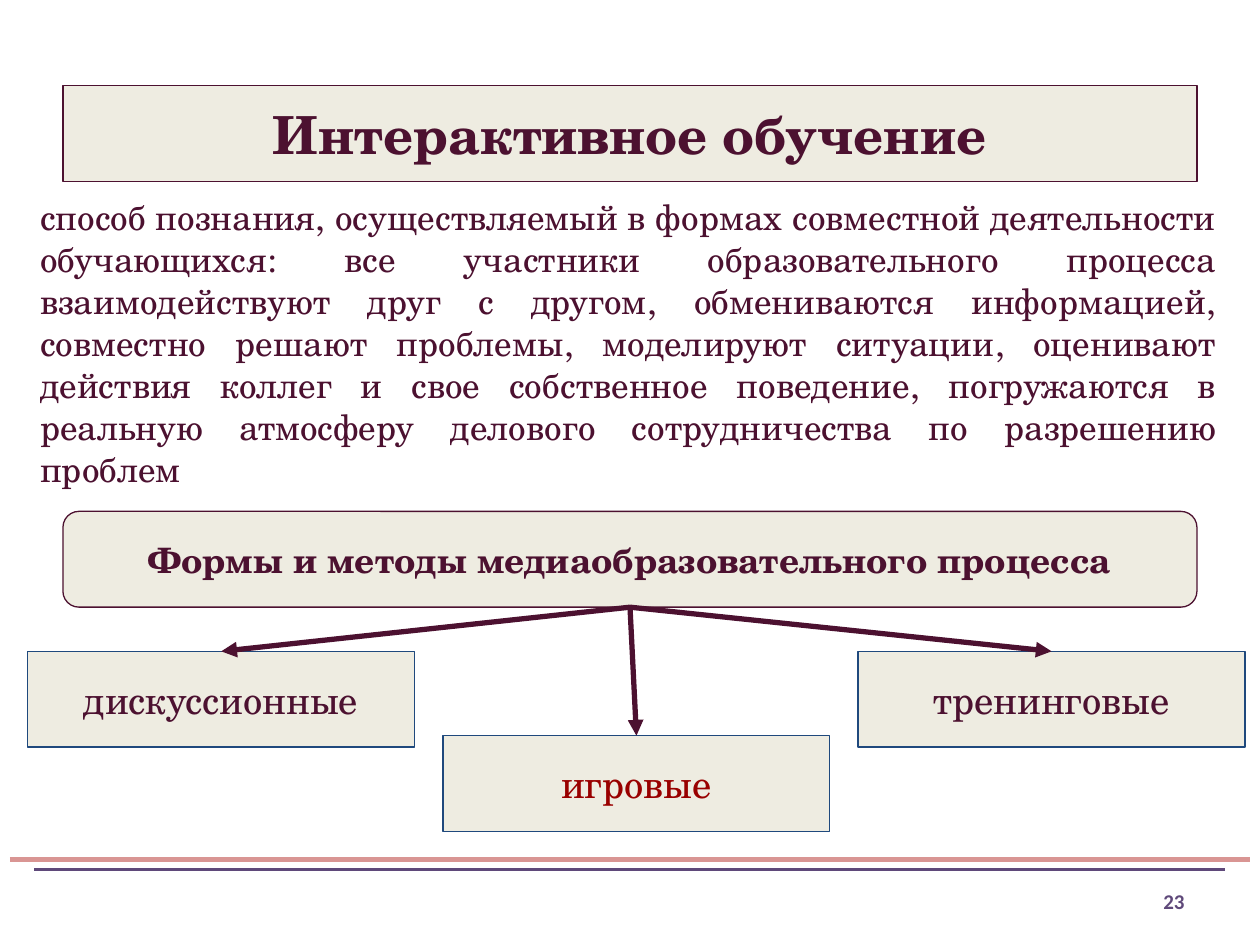
from lxml import etree
from pptx import Presentation
from pptx import util as u
from pptx.dml import color
from pptx.enum import shapes, text
from pptx.oxml import ns

SERIF = "TeX Gyre Schola"
PLUM, CREAM, NAVY, RED = "4C1130", "EEECE1", "1F497D", "990000"
ROSE, VIOLET = "D99593", "5F497A"
TOP, BOTTOM = 0, 2  # connection sites of a rectangle
MARGIN, WIDE, BOX_HEIGHT = 1.27, 22.86, 1.93


def rgb(value):
    return color.RGBColor.from_string(value)


def write(shape, words, size, ink, alignment, bold=False, font=SERIF, inset=0.25):
    """Fill the shape with one wrapped paragraph; inset is the top and bottom margin in cm."""
    frame = shape.text_frame
    frame.word_wrap = True
    frame.vertical_anchor = text.MSO_ANCHOR.MIDDLE
    frame.margin_left = frame.margin_right = u.Cm(0.25)
    frame.margin_top = frame.margin_bottom = u.Cm(inset)
    paragraph = frame.paragraphs[0]
    paragraph.text = words
    paragraph.alignment = alignment
    paragraph.font.name = font
    paragraph.font.size = u.Pt(size)
    paragraph.font.bold = bold
    paragraph.font.color.rgb = rgb(ink)


presentation = Presentation()
presentation.slide_width, presentation.slide_height = u.Cm(25.4), u.Cm(19.05)
slide = presentation.slides.add_slide(presentation.slide_layouts[6])

# Filled boxes: title, methods heading and the three groups of methods
RECTANGLE = shapes.MSO_SHAPE.RECTANGLE
ROUNDED = shapes.MSO_SHAPE.ROUNDED_RECTANGLE
GROUP_LEFT, GROUP_STEP, GROUP_WIDTH = 0.56, 8.37, 7.8
boxes = [
    (RECTANGLE, MARGIN, 1.73, WIDE, PLUM, "Интерактивное обучение", 30, PLUM, True),
    (ROUNDED, MARGIN, 10.31, WIDE, PLUM,
     "Формы и методы медиаобразовательного процесса", 20, PLUM, True),
]
groups = [("дискуссионные", 13.13, PLUM), ("игровые", 14.83, RED), ("тренинговые", 13.13, PLUM)]
for index, (words, top, ink) in enumerate(groups):
    left = GROUP_LEFT + index * GROUP_STEP
    boxes.append((RECTANGLE, left, top, GROUP_WIDTH, NAVY, words, 22, ink, False))

drawn = []
for kind, left, top, width, outline, words, size, ink, bold in boxes:
    shape = slide.shapes.add_shape(kind, u.Cm(left), u.Cm(top), u.Cm(width), u.Cm(BOX_HEIGHT))
    shape.shadow.inherit = False
    shape.fill.solid()
    shape.fill.fore_color.rgb = rgb(CREAM)
    shape.line.color.rgb = rgb(outline)
    shape.line.width = u.Pt(0.75)
    write(shape, words, size, ink, text.PP_ALIGN.CENTER, bold)
    drawn.append(shape)
title, heading, *group_shapes = drawn

# Definition and slide number
definition = slide.shapes.add_textbox(u.Cm(0.56), u.Cm(3.81), u.Cm(24.21), u.Cm(6.07))
write(definition,
      "способ познания, осуществляемый в формах совместной деятельности обучающихся: "
      "все участники образовательного процесса взаимодействуют друг с другом, "
      "обмениваются информацией, совместно решают проблемы, моделируют ситуации, "
      "оценивают действия коллег и свое собственное поведение, погружаются в реальную "
      "атмосферу делового сотрудничества по разрешению проблем",
      20, PLUM, text.PP_ALIGN.JUSTIFY, inset=0.13)
definition.text_frame.vertical_anchor = text.MSO_ANCHOR.TOP

number = slide.shapes.add_textbox(u.Cm(22.5), u.Cm(17.65), u.Cm(1.63), u.Cm(1.02))
write(number, "23", 12, VIOLET, text.PP_ALIGN.RIGHT, True, "Calibri", 0.13)

# Footer rules and arrows from the heading to each group
lines = []
for left, right, top, ink, weight in [(0.2, 25.2, 17.32, ROSE, 3), (0.69, 24.69, 17.53, VIOLET, 2)]:
    rule = slide.shapes.add_connector(
        shapes.MSO_CONNECTOR.STRAIGHT, u.Cm(left), u.Cm(top), u.Cm(right), u.Cm(top))
    lines.append((rule, ink, weight, False))
for group in group_shapes:
    arrow = slide.shapes.add_connector(shapes.MSO_CONNECTOR.STRAIGHT, 0, 0, 0, 0)
    arrow.begin_connect(heading, BOTTOM)
    arrow.end_connect(group, TOP)
    lines.append((arrow, PLUM, 3, True))

for line, ink, weight, has_head in lines:
    line.line.color.rgb = rgb(ink)
    line.line.width = u.Pt(weight)
    if has_head:
        etree.SubElement(line.line._get_or_add_ln(), ns.qn("a:tailEnd"), type="triangle")
    etree.SubElement(line._element.spPr, ns.qn("a:effectLst"))

presentation.save("out.pptx")
